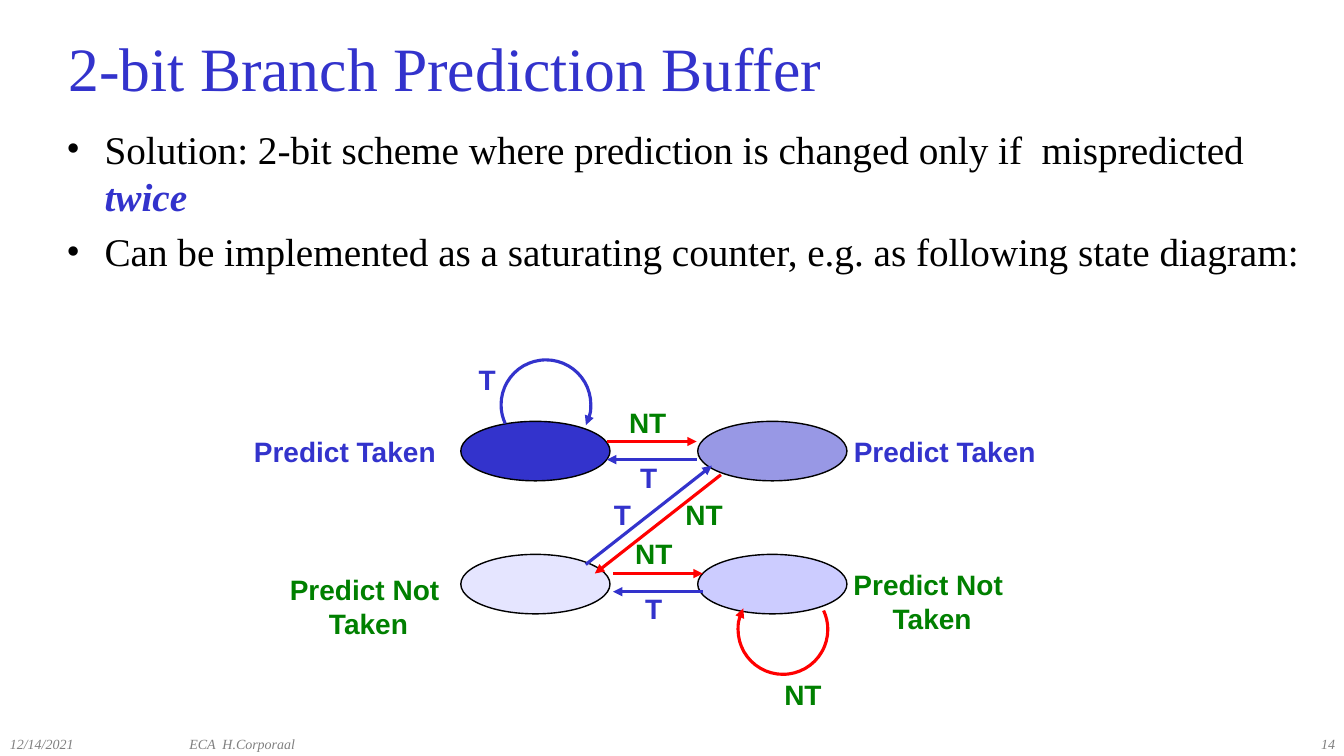
import pptx
import pptx.util
import pptx.dml.color
import pptx.enum.shapes
import pptx.enum.text
import pptx.oxml
import pptx.oxml.ns
import lxml.etree

RGB = pptx.dml.color.RGBColor
SHAPE = pptx.enum.shapes.MSO_SHAPE
ALIGN = pptx.enum.text.PP_ALIGN
ANCHOR = pptx.enum.text.MSO_ANCHOR
qn = pptx.oxml.ns.qn

BLUE = RGB(0x33, 0x33, 0xCC)
PALE = RGB(0xCC, 0xCC, 0xFF)
RED = RGB(0xFF, 0x00, 0x00)
GREEN = RGB(0x00, 0x80, 0x00)
GRAY = RGB(0x80, 0x80, 0x80)
BLACK = RGB(0x00, 0x00, 0x00)

SERIF = "Times New Roman"
SANS = "Arial"


def px(length):
    """100 px to the inch."""
    return pptx.util.Emu(length * 9144)


def style_run(run, size, font, color, bold=False, italic=False):
    run.font.size = pptx.util.Pt(size)
    run.font.name = font
    run.font.color.rgb = color
    run.font.bold = bold
    run.font.italic = italic


def add_text(slide, box, text, size, font, color, bold=False, italic=False,
             align=ALIGN.LEFT, wrap=True, anchor=ANCHOR.TOP):
    shape = slide.shapes.add_textbox(*map(px, box))
    frame = shape.text_frame
    frame.text = text
    frame.word_wrap = wrap
    frame.vertical_anchor = anchor
    for paragraph in frame.paragraphs:
        paragraph.alignment = align
        for run in paragraph.runs:
            style_run(run, size, font, color, bold, italic)
    return shape


def add_arrowhead(shape):
    line = shape.line._get_or_add_ln()
    lxml.etree.SubElement(line, qn("a:tailEnd"), type="triangle")


def add_arrow(slide, start, end, color):
    arrow = slide.shapes.add_connector(
        pptx.enum.shapes.MSO_CONNECTOR.STRAIGHT, *map(px, start + end))
    arrow.line.color.rgb = color
    arrow.line.width = pptx.util.Pt(2.25)
    add_arrowhead(arrow)
    lxml.etree.SubElement(arrow._element.spPr, qn("a:effectLst"))


def add_loop(slide, box, start_degrees, end_degrees, color):
    loop = slide.shapes.add_shape(SHAPE.ARC, *map(px, box))
    loop.shadow.inherit = False
    # Arc adjustments are counted in 0.6 units per degree
    loop.adjustments[0] = start_degrees * 0.6
    loop.adjustments[1] = end_degrees * 0.6
    loop.fill.background()
    loop.line.color.rgb = color
    loop.line.width = pptx.util.Pt(2.25)
    add_arrowhead(loop)


def add_state(slide, box, color, opacity):
    state = slide.shapes.add_shape(SHAPE.OVAL, *map(px, box))
    state.shadow.inherit = False
    state.fill.solid()
    state.fill.fore_color.rgb = color
    state.line.color.rgb = BLACK
    state.line.width = pptx.util.Pt(1)
    if opacity < 100:
        fill_color = state._element.spPr.find(qn("a:solidFill"))[0]
        lxml.etree.SubElement(fill_color, qn("a:alpha"), val=str(opacity * 1000))


def add_bullets(slide, box):
    bullets = [
        [("Solution: 2-bit scheme where prediction is changed only if  mispredicted ", False),
         ("twice", True)],
        [("Can be implemented as a saturating counter, e.g. as following state diagram:", False)],
    ]
    frame = slide.shapes.add_textbox(*map(px, box)).text_frame
    frame.word_wrap = True
    for index, parts in enumerate(bullets):
        paragraph = frame.add_paragraph() if index else frame.paragraphs[0]
        paragraph.space_before = pptx.util.Pt(6)
        for text, emphasis in parts:
            run = paragraph.add_run()
            run.text = text
            style_run(run, 28, SERIF, BLUE if emphasis else BLACK, emphasis, emphasis)
        properties = paragraph._p.get_or_add_pPr()
        properties.set("marL", str(px(38)))
        properties.set("indent", str(-px(38)))
        lxml.etree.SubElement(properties, qn("a:buFont"), typeface=SERIF)
        lxml.etree.SubElement(properties, qn("a:buChar"), char="•")


def add_state_diagram(slide, left, top):
    def at(x, y):
        return left + x, top + y

    # States: two columns by two rows
    fills = [[(BLUE, 100), (BLUE, 50)], [(PALE, 50), (PALE, 100)]]
    for row, row_fills in enumerate(fills):
        for column, (color, opacity) in enumerate(row_fills):
            box = at(217 + 235 * column, 68 + 132 * row) + (148, 59)
            add_state(slide, box, color, opacity)

    # Loops that stay in the saturated states
    add_loop(slide, at(257, 7) + (89, 89), 155, 27, BLUE)
    add_loop(slide, at(492, 230) + (89, 89), 335, 208, RED)

    # Horizontal pairs: not taken to the right, taken to the left
    for x, y in [(362, 88), (368, 219)]:
        add_arrow(slide, at(x, y), at(x + 89, y), RED)
        add_arrow(slide, at(x + 89, y + 18), at(x, y + 18), BLUE)

    # Diagonal pair between the rows
    add_arrow(slide, at(341, 210), at(466, 112), BLUE)
    add_arrow(slide, at(475, 121), at(350, 219), RED)

    # Transition and state labels: size, colour, alignment, places
    labels = {
        "T": (40, 46, BLUE, ALIGN.LEFT,
              [(225, 5), (385, 102), (359, 139), (390, 232)]),
        "NT": (61, 46, GREEN, ALIGN.LEFT,
               [(374, 47), (430, 139), (380, 177), (528, 317)]),
        "Predict Taken": (216, 46, BLUE, ALIGN.LEFT, [(2, 76), (597, 76)]),
        "Predict Not \nTaken": (189, 82, GREEN, ALIGN.CENTER, [(31, 213), (590, 208)]),
    }
    for text, (width, height, color, align, places) in labels.items():
        for x, y in places:
            add_text(slide, at(x, y) + (width, height), text, 20, SANS, color,
                     bold=True, align=align, wrap=False)


def add_footer(slide, top, height):
    for left, width, text, align in [
        (0, 178, "12/14/2021", ALIGN.LEFT),
        (178, 422, "ECA  H.Corporaal", ALIGN.LEFT),
        (1056, 278, "14", ALIGN.RIGHT),
    ]:
        add_text(slide, (left, top, width, height), text, 10, SERIF, GRAY,
                 italic=True, align=align)


def main():
    presentation = pptx.Presentation()
    presentation.slide_width = px(1333)
    presentation.slide_height = px(750)
    slide = presentation.slides.add_slide(presentation.slide_layouts[6])

    add_text(slide, (58, 25, 1244, 83), "2-bit Branch Prediction Buffer",
             44, SERIF, BLUE, anchor=ANCHOR.MIDDLE)
    add_bullets(slide, (56, 119, 1244, 591))
    add_state_diagram(slide, 240, 350)
    add_footer(slide, 725, 25)

    presentation.save("out.pptx")


if __name__ == "__main__":
    main()
